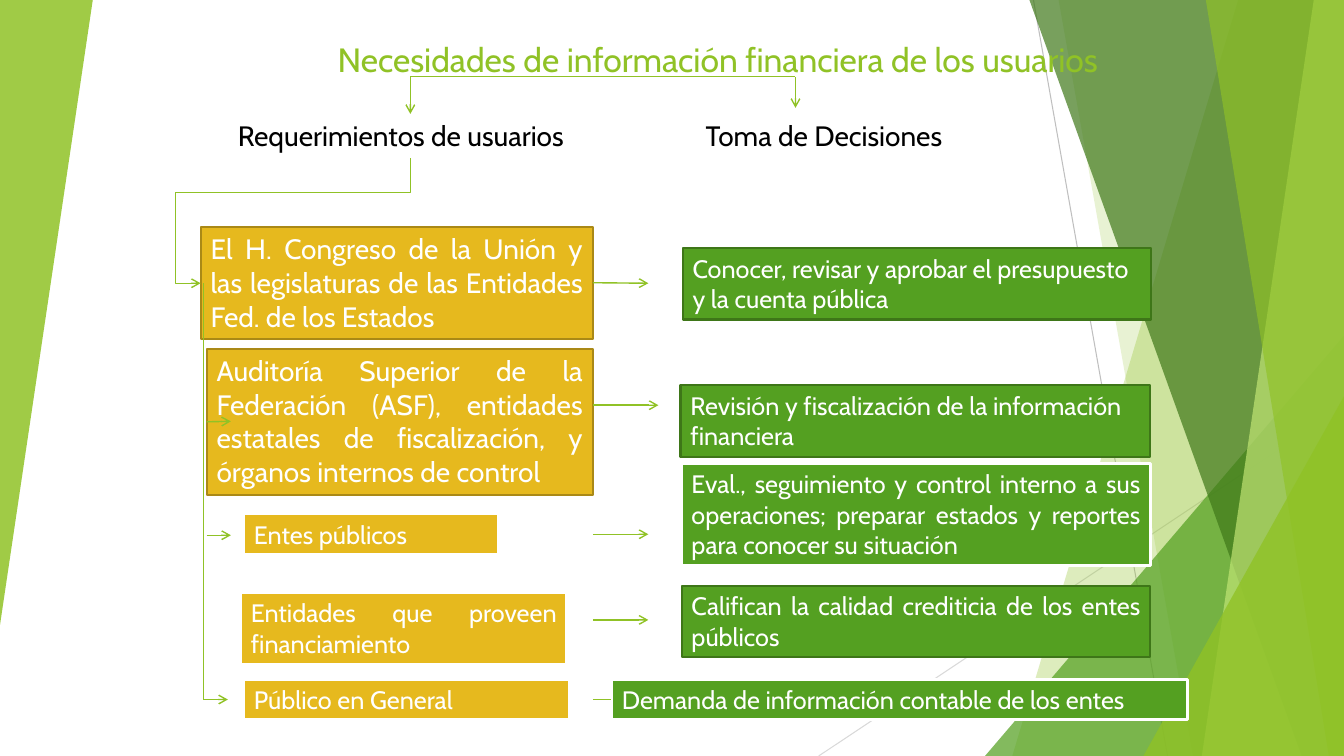
"""Build the slide on the financial information needs of users."""
from lxml import etree
from pptx import Presentation
from pptx.dml.color import RGBColor
from pptx.enum.shapes import MSO_CONNECTOR, MSO_SHAPE
from pptx.enum.text import MSO_ANCHOR, PP_ALIGN
from pptx.oxml.ns import qn
from pptx.util import Inches, Pt

STRAIGHT = MSO_CONNECTOR.STRAIGHT
RECTANGLE, TRIANGLE = MSO_SHAPE.RECTANGLE, MSO_SHAPE.ISOSCELES_TRIANGLE
TOP, BOTTOM = MSO_ANCHOR.TOP, MSO_ANCHOR.BOTTOM
LEFT, RIGHT, JUSTIFY = PP_ALIGN.LEFT, PP_ALIGN.RIGHT, PP_ALIGN.JUSTIFY
LIME, GREEN, GOLD, WHITE, BLACK = "90C226", "54A021", "E6B91E", "FFFFFF", "000000"
DARK_GREEN, DARK_GOLD = "3E7618", "AA8916"
WIDTH, HEIGHT = 13.33, 7.5
rgb = RGBColor.from_string


def write(shape, text, size=18, color=WHITE, align=LEFT, anchor=TOP):
    frame = shape.text_frame
    frame.word_wrap = True
    frame.vertical_anchor = anchor
    paragraph = frame.paragraphs[0]
    paragraph.alignment = align
    run = paragraph.add_run()
    run.text = text
    run.font.name = "Cabin"
    run.font.size = Pt(size)
    run.font.color.rgb = rgb(color)


def draw_line(points, color=LIME, width=1, arrow=True):
    places = [(Inches(x), Inches(y)) for x, y in points]
    if len(places) == 2:
        line = shapes.add_connector(STRAIGHT, *places[0], *places[1])
    else:
        builder = shapes.build_freeform(*places[0])
        builder.add_line_segments(places[1:], close=False)
        line = builder.convert_to_shape()
        line.fill.background()
    line.line.color.rgb = rgb(color)
    line.line.width = Pt(width)
    properties = line.element.spPr
    if arrow:
        etree.SubElement(properties.find(qn("a:ln")), qn("a:tailEnd"), type="arrow")
    etree.SubElement(properties, qn("a:effectLst"))
    return line


presentation = Presentation()
presentation.slide_width, presentation.slide_height = Inches(WIDTH), Inches(HEIGHT)
slide = presentation.slides.add_slide(presentation.slide_layouts[5])
shapes = slide.shapes

draw_line([(10.25, 0), (11.58, HEIGHT)], "BFBFBF", 0.75, arrow=False)
draw_line([(WIDTH, 4.03), (8.12, HEIGHT)], "D9D9D9", 0.75, arrow=False)

# Bands give their left edge at top and bottom; triangles give a box and a rotation.
facets = [
    ((12.28, 10.04), LIME, 30),
    ((10.5, 11.83), LIME, 20),
    ((9.77, 3.33, 3.56, 4.17, 0), GREEN, 72),
    ((10.21, 12.91), "3F7819", 70),
    ((13.03, 11.92), "C0E474", 70),
    ((11.96, 13.18), LIME, 65),
    ((11.34, 3.93, 1.99, 3.57, 0), LIME, 80),
    ((0, 0, 0.92, 6.2, 180), LIME, 85),
]
for outline, color, opacity in facets:
    if len(outline) == 2:
        top_x, bottom_x = outline
        corners = [(WIDTH, 0), (WIDTH, HEIGHT), (bottom_x, HEIGHT)]
        builder = shapes.build_freeform(Inches(top_x), 0)
        builder.add_line_segments([(Inches(x), Inches(y)) for x, y in corners])
        facet = builder.convert_to_shape()
    else:
        *box, rotation = outline
        facet = shapes.add_shape(TRIANGLE, *map(Inches, box))
        facet.adjustments[0] = 1
        facet.rotation = rotation
    facet.shadow.inherit = False
    facet.line.fill.background()
    facet.fill.solid()
    facet.fill.fore_color.rgb = rgb(color)
    tint = facet.element.spPr.find(qn("a:solidFill"))[0]
    etree.SubElement(tint, qn("a:alpha"), val=str(opacity * 1000))

title = shapes.title
title.left, title.top, title.width, title.height = map(Inches, (2.49, 0.21, 8.5, 0.63))
write(title, "Necesidades de información financiera de los usuarios",
      size=24, color=LIME, align=RIGHT, anchor=BOTTOM)
shapes.element.append(title.element)

headings = []
for heading, left, width in [("Requerimientos de usuarios", 2.26, 3.62),
                             ("Toma de Decisiones", 6.9, 2.83)]:
    label = shapes.add_textbox(Inches(left), Inches(1.13), Inches(width), Inches(0.44))
    write(label, heading, size=20, color=BLACK)
    headings.append(label)

users = [
    ("El H. Congreso de la Unión y las legislaturas de las Entidades Fed. de los Estados",
     (1.99, 2.25, 3.89, 1.11), GOLD, DARK_GOLD, 20, JUSTIFY),
    ("Auditoría Superior de la Federación (ASF), entidades estatales de fiscalización, "
     "y órganos internos de control",
     (2.05, 3.46, 3.83, 1.45), GOLD, DARK_GOLD, 20, JUSTIFY),
    ("Entes públicos", (2.42, 5.1, 2.52, 0.4), GOLD, WHITE, 18, LEFT),
    ("Público en General", (2.42, 6.74, 3.23, 0.4), GOLD, WHITE, 18, LEFT),
    ("Entidades que proveen financiamiento",
     (2.39, 5.88, 3.23, 0.71), GOLD, WHITE, 18, JUSTIFY),
]
decisions = [
    ("Conocer, revisar y aprobar el presupuesto y la cuenta pública",
     (6.77, 2.46, 4.65, 0.71), GREEN, DARK_GREEN, 18, LEFT),
    ("Revisión y fiscalización de la información financiera",
     (6.75, 3.82, 4.66, 0.71), GREEN, DARK_GREEN, 18, LEFT),
    ("Eval., seguimiento y control interno a sus operaciones; preparar estados y "
     "reportes para conocer su situación",
     (6.76, 4.6, 4.65, 1.01), GREEN, WHITE, 18, JUSTIFY),
    ("Califican la calidad crediticia de los entes públicos",
     (6.76, 5.81, 4.65, 0.71), GREEN, DARK_GREEN, 18, JUSTIFY),
    ("Demanda de información contable de los entes",
     (6.07, 6.74, 5.71, 0.4), GREEN, WHITE, 18, JUSTIFY),
]
cards = []
for text, box, fill, border, size, align in users + decisions:
    card = shapes.add_shape(RECTANGLE, *map(Inches, box))
    card.shadow.inherit = False
    card.fill.solid()
    card.fill.fore_color.rgb = rgb(fill)
    card.line.color.rgb = rgb(border)
    card.line.width = Pt(2 if border == WHITE else 1.5)
    write(card, text, size=size, align=align)
    cards.append(card)
congress, audit = cards[:2]

to_requirements = draw_line([(4.07, 0.76), (4.07, 1.13)])
to_requirements.end_connect(headings[0], 0)
draw_line([(7.89, 0.76), (7.89, 1.07)])
draw_line([(4.07, 0.76), (7.89, 0.76)], arrow=False)
draw_line([(4.07, 1.57), (4.07, 1.91), (1.74, 1.91), (1.74, 2.81), (1.99, 2.81)])
draw_line([(2.02, 2.81), (2.02, 6.94)], arrow=False)

to_audit = draw_line([(2.05, 4.18), (2.29, 4.18)])
to_audit.begin_connect(audit, 1)
for start, y in [(2.05, 5.31), (2.02, 6.94)]:
    draw_line([(start, y), (start + 0.24, y)])

from_congress = draw_line([(5.88, 2.81), (6.43, 2.81)])
from_congress.begin_connect(congress, 3)
for end, y in [(6.53, 4.02), (6.43, 5.3), (6.43, 6.15), (6.43, 6.94)]:
    draw_line([(5.88, y), (end, y)])

for card in cards[len(users):]:
    shapes.element.append(card.element)

presentation.save("out.pptx")
